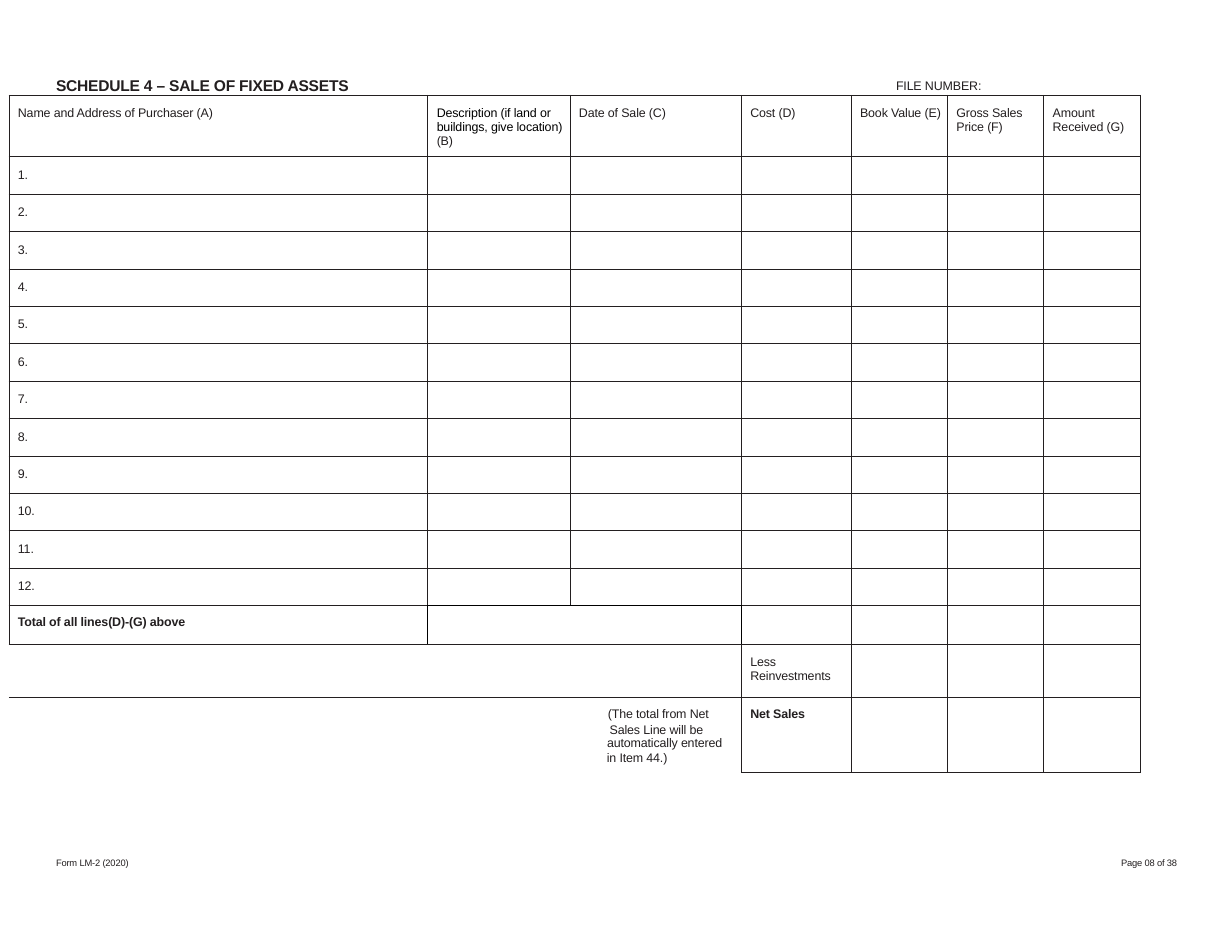
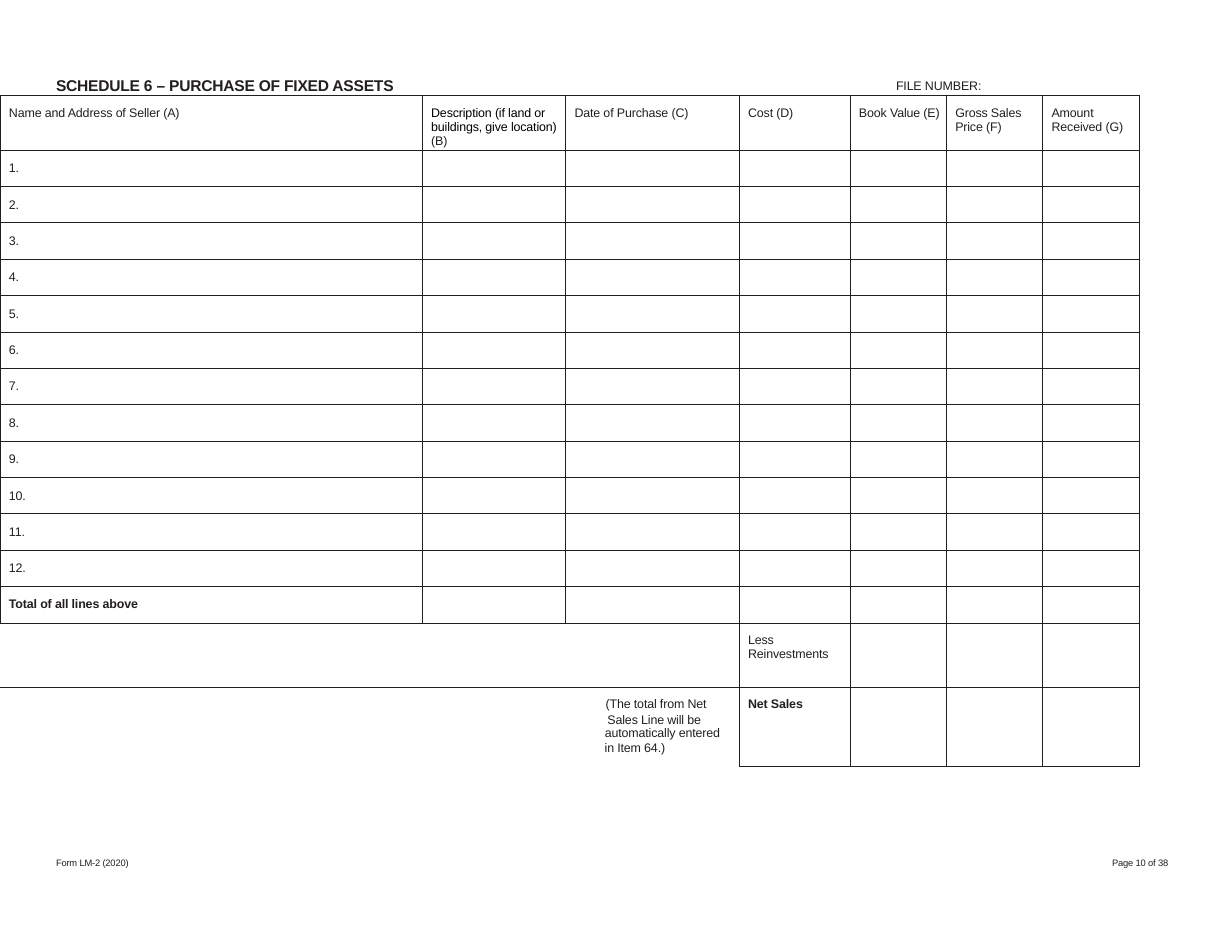
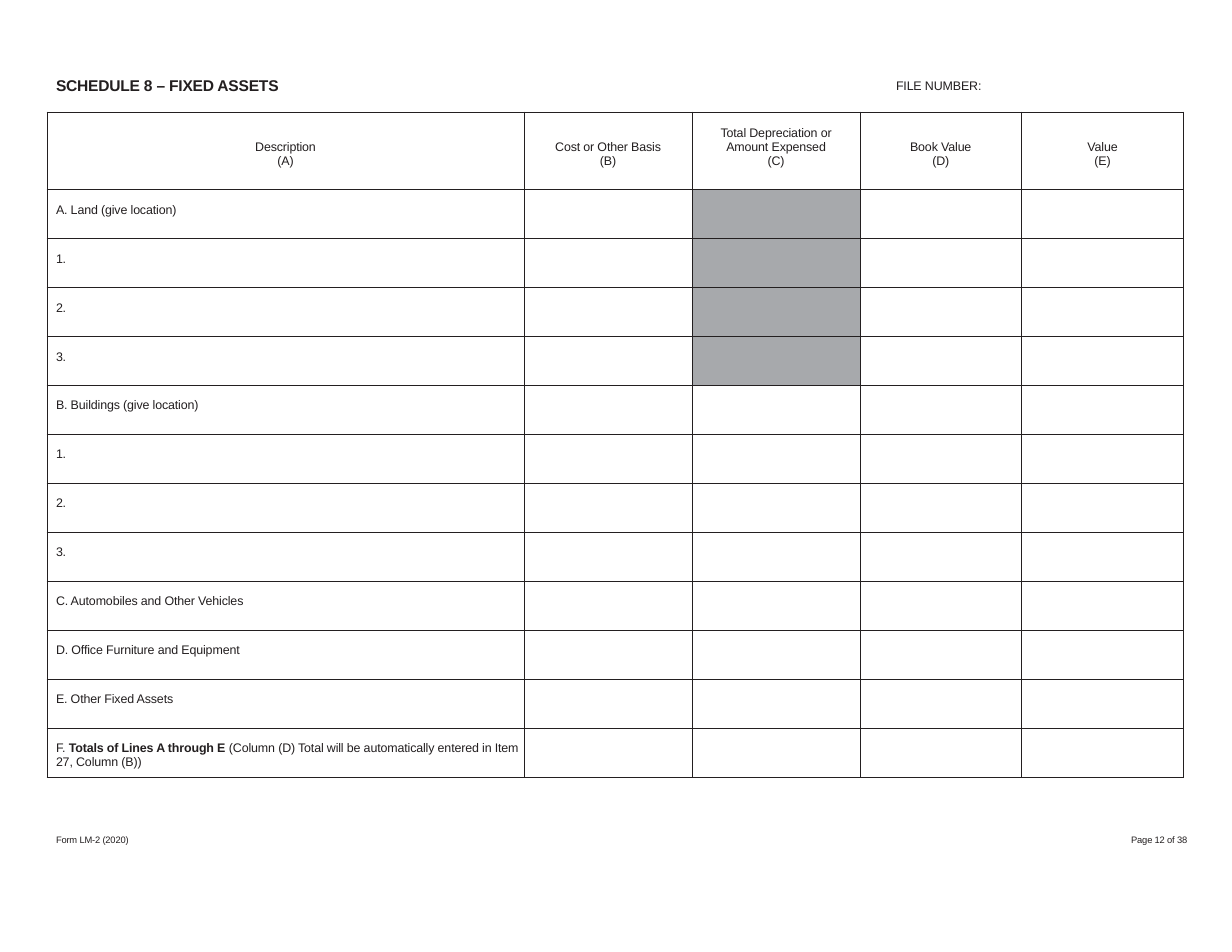
"""Build three fixed-asset schedule pages of a financial report form."""
import pptx
import pptx.dml.color
import pptx.enum.text
import pptx.oxml.ns
import pptx.util
from lxml import etree

INK, BLACK, SHADE = "231F20", "000000", "A7A9AC"
FONT = "Arial"
ALIGN = pptx.enum.text.PP_ALIGN
FORM = "Form LM-2 (2020)"
LEFT = 0.49

LINE_COUNT = 12
TOTAL, LESS, NET, LAST = 13, 14, 15, 18
NOTE_LINES = ["(The total from Net", "Sales Line will be", "automatically entered", "in Item {})"]
NOTE_MARGINS = [0.29, 0.34, 0.17, 0.66]
NOTE_SPACING = [8.8, 8.2, 8.2, 8.9]
OPEN_SIDES = {
    (LESS, 0): "TRB", (NET, 0): "TR", (16, 0): "R", (17, 0): "R", (LAST, 0): "R",
    (16, 3): "LR", (17, 3): "LR", (LAST, 3): "LRB",
}

SALES = {
    "title": "SCHEDULE 4 – SALE OF FIXED ASSETS", "page": "Page 08 of 38",
    "title_width": 4.07, "page_left": 10, "footer_top": 7.64,
    "party": "Name and Address of Purchaser (A)", "date": "Date of Sale (C)",
    "total": "Total of all lines(D)-(G) above", "item": "44.",
    "corner": (0.08, 0.85), "height": 6.05,
    "columns": [3.74, 1.27, 1.53, 0.98, 0.86, 0.86, 0.86],
    "header": 0.55, "closing": [0.35, 0.47, 0.24, 0.12, 0.12, 0.19],
    "open": {(TOTAL, 1): "LT", (TOTAL, 2): "TR"},
    "heavy": {(12, 1): "B", (12, 2): "B", (TOTAL, 0): "R", (TOTAL, 1): "LT",
              (TOTAL, 2): "TR", (TOTAL, 3): "L"},
}
PURCHASES = {
    "title": "SCHEDULE 6 – PURCHASE OF FIXED ASSETS", "page": "Page 10 of 38",
    "title_width": 4.07, "page_left": 9.92, "footer_top": 7.64,
    "party": "Name and Address of Seller (A)", "date": "Date of Purchase (C)",
    "total": "Total of all lines above", "item": "64.",
    "corner": (0, 0.85), "height": 6,
    "columns": [3.77, 1.28, 1.55, 0.99, 0.86, 0.86, 0.86],
    "header": 0.49, "closing": [0.33, 0.57, 0.24, 0.12, 0.12, 0.23],
    "open": {}, "heavy": {},
}
ASSETS = {
    "title": "SCHEDULE 8 – FIXED ASSETS", "page": "Page 12 of 38",
    "title_width": 2.07, "page_left": 10.09, "footer_top": 7.44,
    "corner": (0.42, 1), "height": 5.94, "header": 0.69,
    "columns": [4.26, 1.5, 1.5, 1.44, 1.45],
    "headings": ["Description\v(A)", "Cost or Other Basis\v(B)",
                 "Total Depreciation or\vAmount Expensed\v(C)", "Book Value\v(D)", "Value\v(E)"],
    "lines": ["A. Land (give location)", "1.", "2.", "3.", "B. Buildings (give location)",
              "1.", "2.", "3.", "C. Automobiles and Other Vehicles",
              "D. Office Furniture and Equipment", "E. Other Fixed Assets"],
    "totals": [("F. ", False, INK), ("Totals of Lines A through E ", True, INK),
               ("(Column (D) Total will be automatically entered in Item 27, Column (B))", False, INK)],
    "shaded_rows": range(1, 5),
}


def inches(value):
    """Turn inches into a length."""
    return pptx.util.Inches(value)


def colour(code):
    """Turn a hex string into a colour."""
    return pptx.dml.color.RGBColor.from_string(code)


def write(frame, text, size, bold=False, align=ALIGN.LEFT, spacing=None):
    """Write a string, or a list of (text, bold, colour) pieces, as one paragraph."""
    para = frame.paragraphs[0]
    pieces = [(text, bold, INK)] if isinstance(text, str) else text
    para.alignment = align
    if spacing:
        para.line_spacing = pptx.util.Pt(spacing)
    if len(pieces) == 1:
        para.text = pieces[0][0]
    else:
        for words, _, _ in pieces:
            para.add_run().text = words
    for index, span in enumerate(para.runs):
        _, heavy, code = pieces[min(index, len(pieces) - 1)]
        span.font.name, span.font.size, span.font.bold = FONT, pptx.util.Pt(size), heavy
        span.font.color.rgb = colour(code)
        span._r.get_or_add_rPr().set("spc", "-10")


def fit_text(box, place, text, size, bold=False):
    """Place a text holder without insets and write its line."""
    box.left, box.top, box.width, box.height = map(inches, place)
    frame = box.text_frame
    frame.margin_left = frame.margin_top = inches(0.01)
    frame.margin_right = frame.margin_bottom = 0
    frame.word_wrap = True
    frame.auto_size = pptx.enum.text.MSO_AUTO_SIZE.NONE
    frame.vertical_anchor = pptx.enum.text.MSO_ANCHOR.TOP
    write(frame, text, size, bold)


def add_page(deck, sheet):
    """Add a slide with the title, file number and footer all pages share."""
    page = deck.slides.add_slide(deck.slide_layouts[5])
    fit_text(page.shapes.title, (LEFT, 0.67, sheet["title_width"], 0.18), sheet["title"], 10, True)
    foot, start = sheet["footer_top"], sheet["page_left"]
    for place, text, size in [
        ((7.99, 0.69, 0.81, 0.16), "FILE NUMBER:", 8),
        ((LEFT, foot, 1.81, 0.11), FORM, 6),
        ((start, foot, 10.64 - start, 0.11), sheet["page"], 6),
    ]:
        fit_text(page.shapes.add_textbox(0, 0, 0, 0), place, text, size)
    return page


def draw_sides(cell, sides, heavy=""):
    """Rule the named sides of a cell and clear the others."""
    properties = cell._tc.get_or_add_tcPr()
    for side in "LRTB":
        width = 12700 if side in heavy else 6350
        line = etree.SubElement(properties, pptx.oxml.ns.qn("a:ln" + side), w=str(width))
        if side in sides:
            fill = etree.SubElement(line, pptx.oxml.ns.qn("a:solidFill"))
            etree.SubElement(fill, pptx.oxml.ns.qn("a:srgbClr"), val=BLACK if side in heavy else INK)
        else:
            etree.SubElement(line, pptx.oxml.ns.qn("a:noFill"))


def add_grid(page, sheet, heights, open_sides, heavy_sides):
    """Add an empty ruled table."""
    columns = sheet["columns"]
    left, top = sheet["corner"]
    grid = page.shapes.add_table(len(heights), len(columns), inches(left), inches(top),
                                 inches(sum(columns)), inches(sum(heights))).table
    grid.first_row = grid.horz_banding = False
    for column, width in zip(grid.columns, columns):
        column.width = inches(width)
    for row, height in enumerate(heights):
        grid.rows[row].height = inches(height)
        for column in range(len(columns)):
            cell = grid.cell(row, column)
            cell.margin_left = cell.margin_right = cell.margin_top = cell.margin_bottom = 0
            draw_sides(cell, open_sides.get((row, column), "LRTB"), heavy_sides.get((row, column), ""))
            cell.fill.background()
            etree.SubElement(cell.text_frame.paragraphs[0]._p, pptx.oxml.ns.qn("a:endParaRPr"), sz="600")
    return grid


def fill_cell(cell, text, top=0.1, left=0.08, right=0, **style):
    """Write a cell's text inside its margins."""
    cell.margin_top, cell.margin_left, cell.margin_right = inches(top), inches(left), inches(right)
    write(cell.text_frame, text, 8, **style)


def add_transactions(deck, sheet):
    """Add a sale or purchase schedule with its net sales block."""
    page = add_page(deck, sheet)
    line = (sheet["height"] - sheet["header"] - sum(sheet["closing"])) / LINE_COUNT
    heights = [sheet["header"]] + [line] * LINE_COUNT + sheet["closing"]
    open_sides = {**OPEN_SIDES, **sheet["open"]}
    for row in range(LESS, LAST + 1):
        for column in (1, 2):
            open_sides[row, column] = OPEN_SIDES[row, 0]
    grid = add_grid(page, sheet, heights, open_sides, sheet["heavy"])
    description = [("Description (if land or buildings, give location) ", False, BLACK), ("(B)", False, INK)]
    headings = [sheet["party"], description, sheet["date"], "Cost (D)", "Book Value (E)",
                "Gross Sales Price (F)", "Amount Received (G)"]
    for column, heading in enumerate(headings):
        fill_cell(grid.cell(0, column), heading)
    for number in range(1, LINE_COUNT + 1):
        fill_cell(grid.cell(number, 0), f"{number}.")
    fill_cell(grid.cell(TOTAL, 0), sheet["total"], top=0.09, bold=True)
    fill_cell(grid.cell(LESS, 3), "Less Reinvestments", top=0.09)
    fill_cell(grid.cell(NET, 3), "Net Sales", top=0.09, bold=True, spacing=8.9)
    for row in range(LESS, LAST + 1):
        grid.cell(row, 0).merge(grid.cell(row, 2))
    for column in range(4, 7):
        grid.cell(NET, column).merge(grid.cell(LAST, column))
    for index, (text, margin, spacing) in enumerate(zip(NOTE_LINES, NOTE_MARGINS, NOTE_SPACING)):
        fill_cell(grid.cell(NET + index, 0), text.format(sheet["item"]), top=0 if index else 0.09,
                  left=0, right=margin, align=ALIGN.RIGHT, spacing=spacing)


def add_assets(deck, sheet):
    """Add the schedule of assets held."""
    page = add_page(deck, sheet)
    lines = sheet["lines"] + [sheet["totals"]]
    line = (sheet["height"] - sheet["header"]) / len(lines)
    grid = add_grid(page, sheet, [sheet["header"]] + [line] * len(lines), {}, {})
    for column, heading in enumerate(sheet["headings"]):
        top = 0.25 - 0.13 * (heading.count("\v") - 1)
        fill_cell(grid.cell(0, column), heading, top=top, left=0, align=ALIGN.CENTER, spacing=9.2)
    for row, text in enumerate(lines, 1):
        fill_cell(grid.cell(row, 0), text, top=0.12)
    for row in sheet["shaded_rows"]:
        fill = grid.cell(row, 2).fill
        fill.solid()
        fill.fore_color.rgb = colour(SHADE)


def main():
    """Build and save the deck."""
    deck = pptx.Presentation()
    deck.slide_width, deck.slide_height = inches(11), inches(8.5)
    add_transactions(deck, SALES)
    add_transactions(deck, PURCHASES)
    add_assets(deck, ASSETS)
    deck.save("out.pptx")


if __name__ == "__main__":
    main()
